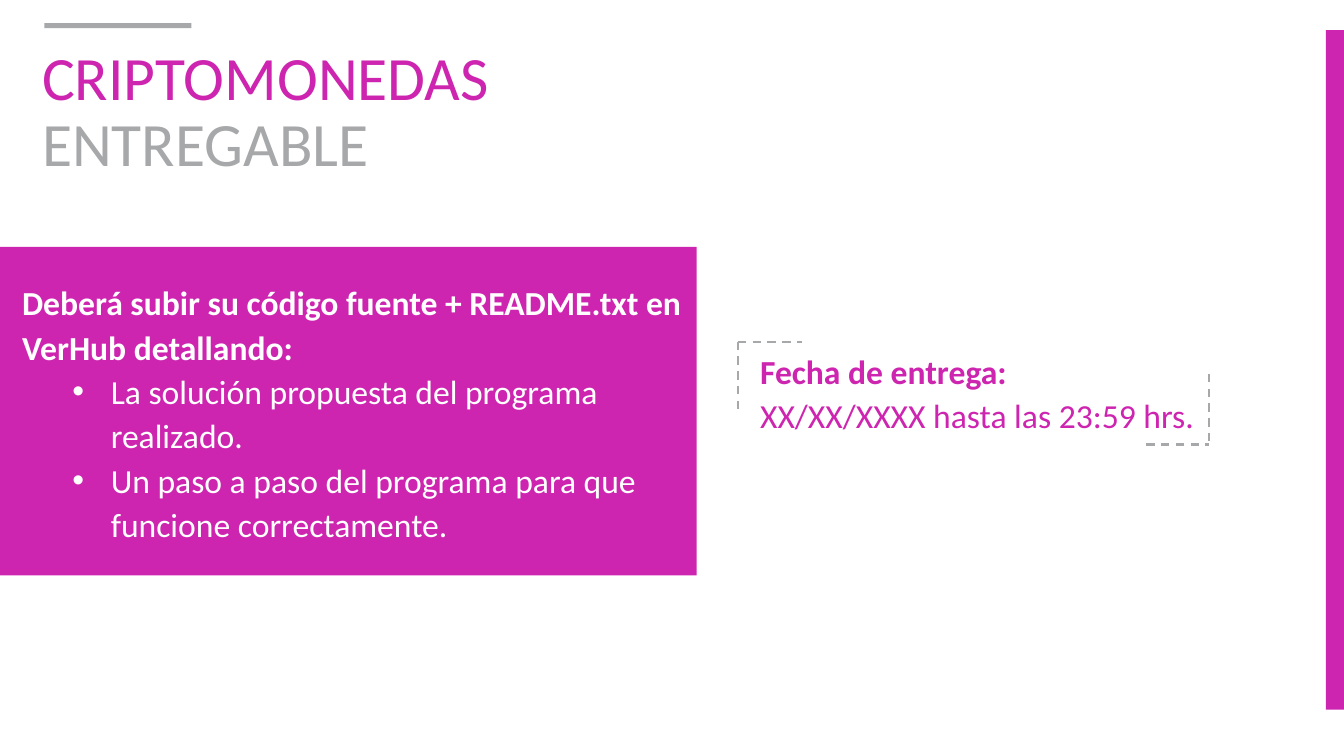
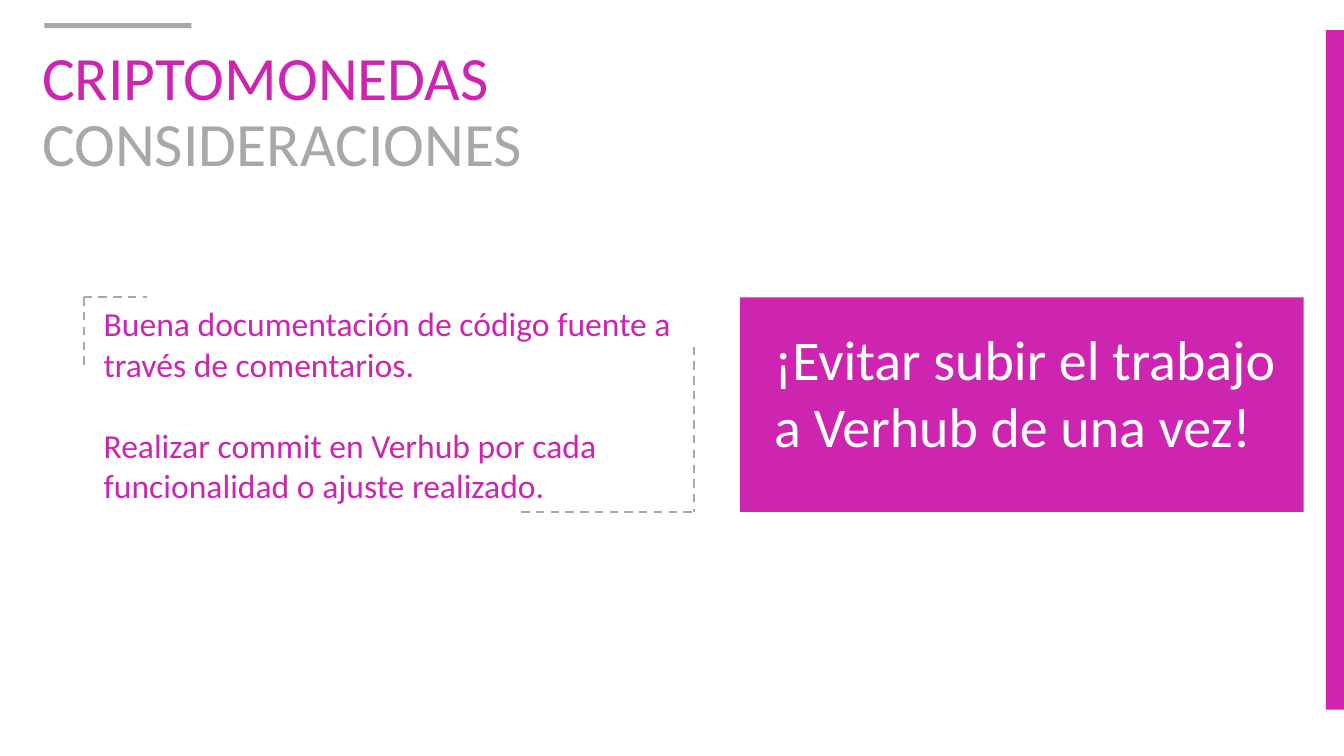
from lxml.etree import SubElement
from pptx import Presentation
from pptx.dml.color import RGBColor
from pptx.enum.dml import MSO_LINE_DASH_STYLE as Dash
from pptx.enum.shapes import MSO_CONNECTOR as Connector, MSO_SHAPE as Shape
from pptx.enum.text import MSO_ANCHOR as Anchor
from pptx.oxml.ns import qn
from pptx.util import Inches, Pt

MAGENTA = RGBColor(0xCD, 0x25, 0xB0)
GRAY = RGBColor(0xA7, 0xA8, 0xAA)
WHITE = RGBColor(0xFF, 0xFF, 0xFF)
FONT = "Calibri"
WIDTH, HEIGHT = 13.33, 7.5
TOPIC = "CRIPTOMONEDAS"

BODY = {"indent": 0.12}
BULLET = {"indent": 1, "hanging": -0.38, "bullet": "•"}
SHIFTED = {"indent": 0.65}
BOLD = {"bold": True}

SLIDES = [
    {
        "heading": "ENTREGABLE",
        "panel": (0, 2.45, 6.91, 3.26),
        "frame": {"area": (7.32, 3.39, 11.99, 4.41), "start": (0.63, 0.7), "end": (0.62, 0.7)},
        "texts": [
            {
                "area": (7.32, 3.39, 4.89, 0.97), "size": 24, "color": MAGENTA, "spacing": 1.1,
                "lines": [
                    ("Fecha de entrega:", BODY | BOLD),
                    ("XX/XX/XXXX hasta las 23:59 hrs.", BODY),
                ],
            },
            {
                "area": (0, 2.71, 6.91, 2.74), "size": 24, "color": WHITE, "spacing": 1.1,
                "lines": [
                    ("Deberá subir su código fuente + README.txt en VerHub detallando:", BODY | BOLD),
                    ("La solución propuesta del programa realizado.", BULLET),
                    ("Un paso a paso del programa para que funcione correctamente.", BULLET),
                ],
            },
        ],
    },
    {
        "heading": "CONSIDERACIONES",
        "panel": (7.34, 2.95, 5.59, 2.13),
        "frame": {"area": (0.83, 2.95, 6.88, 5.08), "start": (0.63, 0.7), "end": (1.71, 1.64)},
        "texts": [
            {
                "area": (0.81, 2.96, 6.1, 2.12), "size": 24, "color": MAGENTA, "spacing": 1,
                "lines": [
                    ("Buena documentación de código fuente a través de comentarios.", BODY),
                    ("Realizar commit en Verhub por cada funcionalidad o ajuste realizado.",
                     BODY | {"before": 29}),
                ],
            },
            {
                "area": (6.93, 3.17, 6, 1.45), "size": 40, "color": WHITE, "spacing": 1,
                "lines": [
                    ("¡Evitar subir el trabajo", SHIFTED),
                    ("a Verhub de una vez!", SHIFTED),
                ],
            },
        ],
    },
]


def add_block(page, area, color):
    block = page.shapes.add_shape(Shape.RECTANGLE, *map(Inches, area))
    block.shadow.inherit = False
    block.fill.solid()
    block.fill.fore_color.rgb = color
    block.line.fill.background()


def add_dash(page, start, end):
    line = page.shapes.add_connector(Connector.STRAIGHT, *map(Inches, start + end))
    line.line.color.rgb = GRAY
    line.line.width = Pt(1.5)
    line.line.dash_style = Dash.DASH
    SubElement(line._element.spPr, qn("a:effectLst"))


def add_frame(page, area, start, end):
    left, top, right, bottom = area
    add_dash(page, (left, top), (left, top + start[1]))
    add_dash(page, (left, top), (left + start[0], top))
    add_dash(page, (right, bottom - end[1]), (right, bottom))
    add_dash(page, (right - end[0], bottom), (right, bottom))


def add_box(page, area):
    box = page.shapes.add_textbox(*map(Inches, area))
    box.text_frame.word_wrap = True
    return box.text_frame


def add_span(para, text, size, color, bold=False):
    span = para.add_run()
    span.text = text
    span.font.name = FONT
    span.font.size = Pt(size)
    span.font.bold = bold
    span.font.color.rgb = color


def add_title(page, heading):
    frame = add_box(page, (0.32, 0.4, 11.5, 1.45))
    frame.vertical_anchor = Anchor.MIDDLE
    para = frame.paragraphs[0]
    para.line_spacing = 0.9
    add_span(para, TOPIC, 44, MAGENTA)
    para.add_line_break()
    add_span(para, heading, 44, GRAY)


def add_text(page, area, size, color, spacing, lines):
    frame = add_box(page, area)
    for index, (text, style) in enumerate(lines):
        para = frame.add_paragraph() if index else frame.paragraphs[0]
        para.line_spacing = spacing
        para.space_before = Pt(style.get("before", 0))
        props = para._p.get_or_add_pPr()
        props.set("marL", str(Inches(style["indent"])))
        props.set("indent", str(Inches(style.get("hanging", 0))))
        if "bullet" in style:
            SubElement(props, qn("a:buFont"), typeface="Arial")
            SubElement(props, qn("a:buChar"), char=style["bullet"])
        add_span(para, text, size, color, style.get("bold", False))


def main():
    deck = Presentation()
    deck.slide_width, deck.slide_height = Inches(WIDTH), Inches(HEIGHT)
    for content in SLIDES:
        page = deck.slides.add_slide(deck.slide_layouts[6])
        add_block(page, (13.15, 0.3, WIDTH - 13.15, 6.74), MAGENTA)
        add_title(page, content["heading"])
        add_block(page, (0.44, 0.23, 1.46, 0.05), GRAY)
        add_block(page, content["panel"], MAGENTA)
        for text in content["texts"]:
            add_text(page, **text)
        add_frame(page, **content["frame"])
    deck.save("out.pptx")


if __name__ == "__main__":
    main()
